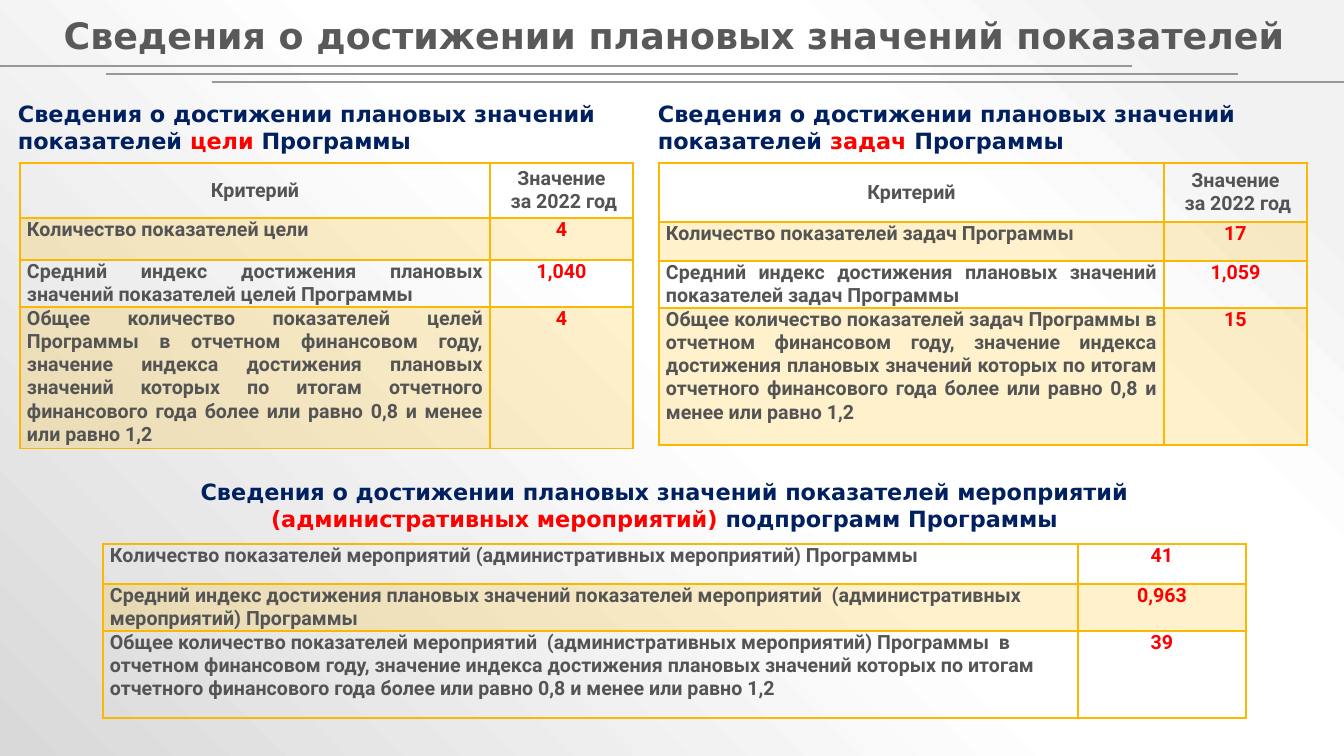
import pptx
import pptx.dml.color
import pptx.enum.shapes
import pptx.enum.text
import pptx.oxml
import pptx.oxml.ns
import pptx.util

PX = 914400 / 100.8
THEME = {
    "title": "595959", "heading": "002060", "accent": "FF0000", "body": "545454",
    "rule": "989898", "gold": "FAB900",
    "title_font": "DejaVu Sans", "table_font": "Roboto",
    "title_size": 26, "heading_size": 16, "table_size": 14,
    "background": [(10, "F2F2F2"), (28, "FFFFFF"), (48, "FFFFFF"), (100, "D9D9D9")],
}
LEFT = pptx.enum.text.PP_ALIGN.LEFT
CENTER = pptx.enum.text.PP_ALIGN.CENTER
JUSTIFY = pptx.enum.text.PP_ALIGN.JUSTIFY
NS = 'xmlns:a="http://schemas.openxmlformats.org/drawingml/2006/main"'


def px(*lengths):
    return [round(n * PX) for n in lengths]


def style(p, role, font, size, align):
    p.alignment = align
    p.font.name = THEME[font]
    p.font.size = pptx.util.Pt(THEME[size])
    p.font.bold = True
    p.font.color.rgb = pptx.dml.color.RGBColor.from_string(THEME[role])


prs = pptx.Presentation()
prs.slide_width, prs.slide_height = px(1344, 756)
s = prs.slides.add_slide(prs.slide_layouts[5])

# Background: radial gradient centred on the top right corner
s.background.fill.gradient()
grad = s.element.find(".//" + pptx.oxml.ns.qn("a:gradFill"))
stops = "".join(f'<a:gs pos="{pos * 1000}"><a:srgbClr val="{color}"/></a:gs>'
                for pos, color in THEME["background"])
grad.getparent().replace(grad, pptx.oxml.parse_xml(
    f'<a:gradFill {NS} rotWithShape="1"><a:gsLst>{stops}</a:gsLst>'
    '<a:path path="circle"><a:fillToRect l="100000" b="100000"/></a:path></a:gradFill>'))

# Title and the three stepped rules under it
title = s.shapes.title
title.left, title.top, title.width, title.height = px(8, 0, 1334, 69)
tf = title.text_frame
tf.text = "Сведения о достижении плановых значений показателей"
tf.auto_size = pptx.enum.text.MSO_AUTO_SIZE.NONE
tf.vertical_anchor = pptx.enum.text.MSO_ANCHOR.MIDDLE
style(tf.paragraphs[0], "title", "title_font", "title_size", CENTER)

for i in range(3):
    x, y = 106 * i, 66 + 8 * i
    rule = s.shapes.add_connector(pptx.enum.shapes.MSO_CONNECTOR.STRAIGHT,
                                  *px(x, y, x + 1132, y))
    rule.line.color.rgb = pptx.dml.color.RGBColor.from_string(THEME["rule"])
    rule.line.width = pptx.util.Pt(2)
    rule.element.spPr.append(pptx.oxml.parse_xml(f"<a:effectLst {NS}/>"))

# Section headings: box, alignment, (text, colour) runs
headings = [
    ((8, 95, 671, 65), LEFT,
     [("Сведения о достижении плановых значений показателей ", "heading"),
      ("цели", "accent"), (" Программы", "heading")]),
    ((648, 95, 671, 65), LEFT,
     [("Сведения о достижении плановых значений показателей ", "heading"),
      ("задач ", "accent"), ("Программы", "heading")]),
    ((133, 473, 1063, 65), CENTER,
     [("Сведения о достижении плановых значений показателей мероприятий ", "heading"),
      ("(административных мероприятий) ", "accent"),
      ("подпрограмм Программы", "heading")]),
]
for box, align, runs in headings:
    tf = s.shapes.add_textbox(*px(*box)).text_frame
    tf.word_wrap = True
    p = tf.paragraphs[0]
    style(p, "heading", "title_font", "heading_size", align)
    for text, role in runs:
        r = p.add_run()
        r.text = text
        r.font.color.rgb = pptx.dml.color.RGBColor.from_string(THEME[role])

# Tables: position, column widths, row heights, label alignment, has header, rows
header = ("Критерий", "Значение\n за 2022 год")
index_range = ("в отчетном финансовом году, значение индекса достижения плановых значений "
               "которых по итогам отчетного финансового года более или равно 0,8 "
               "и менее или равно 1,2")
tables = [
    ((20, 163), (470, 143), (55, 42, 46, 139), JUSTIFY, True, [
        header,
        ("Количество показателей цели", "4"),
        ("Средний индекс достижения плановых значений показателей целей Программы", "1,040"),
        (f"Общее количество показателей целей Программы {index_range}", "4")]),
    ((659, 163), (505, 143), (59, 39, 47, 137), JUSTIFY, True, [
        header,
        ("Количество показателей задач Программы", "17"),
        ("Средний индекс достижения плановых значений показателей задач Программы", "1,059"),
        (f"Общее количество показателей задач Программы {index_range}", "15")]),
    ((103, 544), (975, 168), (40, 47, 87), LEFT, False, [
        ("Количество показателей мероприятий (административных мероприятий) Программы", "41"),
        ("Средний индекс достижения плановых значений показателей мероприятий  "
         "(административных мероприятий) Программы", "0,963"),
        ("Общее количество показателей мероприятий  (административных мероприятий) "
         f"Программы  {index_range}", "39")]),
]
for corner, widths, heights, label_align, has_header, rows in tables:
    table = s.shapes.add_table(len(rows), len(widths), *px(*corner),
                               *px(sum(widths), sum(heights))).table
    table.first_row = table.horz_banding = False
    for column, width in zip(table.columns, px(*widths)):
        column.width = width
    for row, height in zip(table.rows, px(*heights)):
        row.height = height

    for i, row in enumerate(rows):
        is_header = has_header and i == 0
        for j, text in enumerate(row):
            cell = table.cell(i, j)
            cell.margin_left, cell.margin_right = px(7, 7)
            cell.margin_top = cell.margin_bottom = 0
            cell.vertical_anchor = (pptx.enum.text.MSO_ANCHOR.MIDDLE if is_header
                                    else pptx.enum.text.MSO_ANCHOR.TOP)
            cell.text_frame.text = text
            role = "accent" if j and not is_header else "body"
            align = CENTER if j or is_header else label_align
            for p in cell.text_frame.paragraphs:
                style(p, role, "table_font", "table_size", align)

            tcPr = cell._tc.get_or_add_tcPr()
            for side in "LRTB":
                weight = 2 if (i, side) in [(0, "B"), (1, "T")] else 1
                tcPr.append(pptx.oxml.parse_xml(
                    f'<a:ln{side} {NS} w="{pptx.util.Pt(weight)}"><a:solidFill>'
                    f'<a:srgbClr val="{THEME["gold"]}"/></a:solidFill></a:ln{side}>'))
            if i % 2:
                cell.fill.solid()
                cell.fill.fore_color.rgb = pptx.dml.color.RGBColor.from_string(THEME["gold"])
                tint = tcPr.find(pptx.oxml.ns.qn("a:solidFill"))[0]
                tint.append(pptx.oxml.parse_xml(f'<a:alpha {NS} val="20000"/>'))
            else:
                cell.fill.background()

prs.save("out.pptx")
